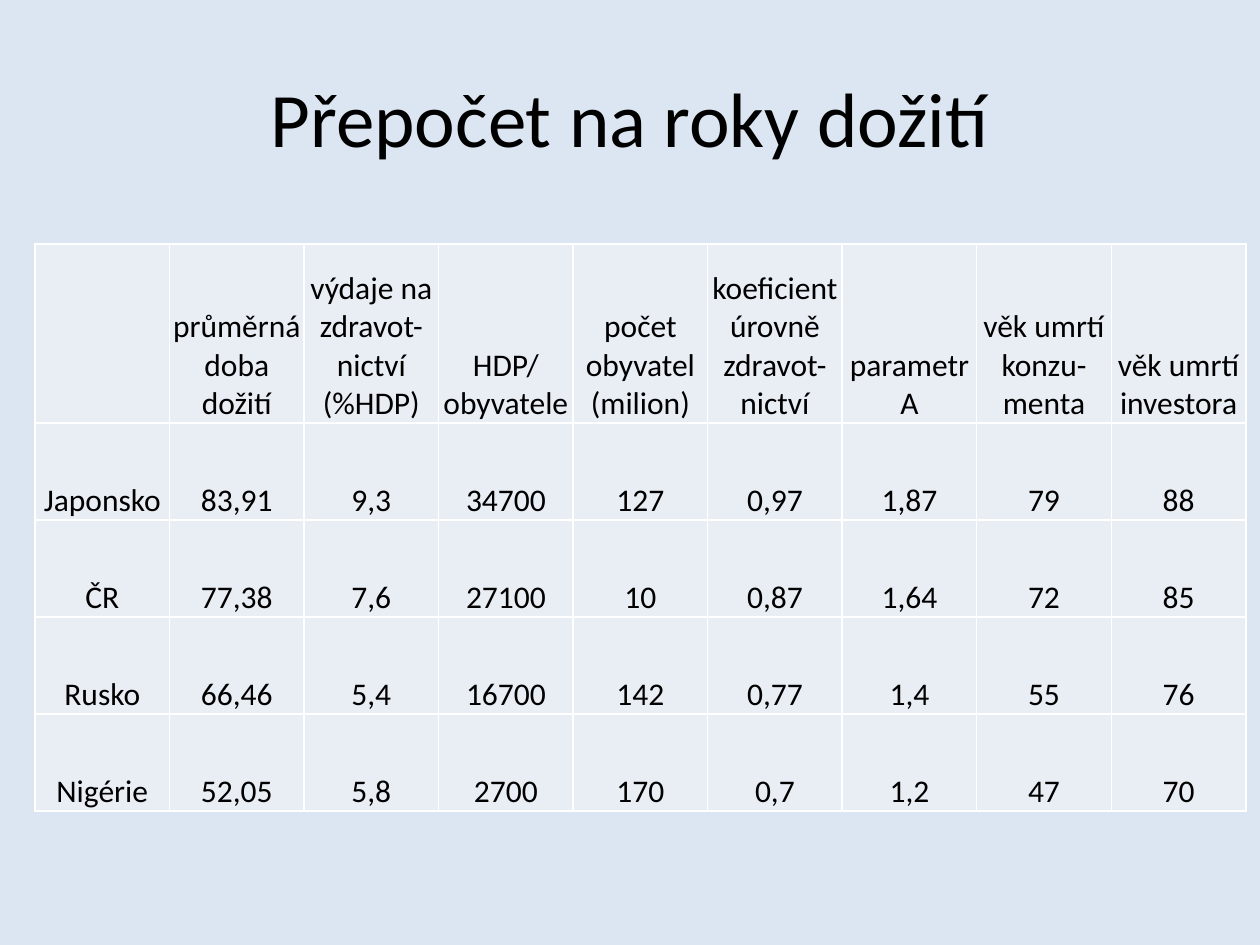
from lxml.etree import SubElement
from pptx import Presentation
from pptx.dml.color import RGBColor as RGB
from pptx.enum.text import MSO_ANCHOR as ANCHOR, PP_ALIGN as ALIGN
from pptx.oxml.ns import qn
from pptx.util import Pt

COLORS = {"background": "DCE6F2", "cell": "E9EDF4", "border": "FFFFFF", "text": "000000"}
HEADERS = [
    "",
    "průměrná doba dožití",
    "výdaje na zdravot-\nnictví (%HDP)",
    "HDP/\nobyvatele",
    "počet obyvatel (milion)",
    "koeficient úrovně zdravot-\nnictví",
    "parametr A",
    "věk umrtí konzu-menta",
    "věk umrtí investora",
]
COUNTRIES = [
    ["Japonsko", "83,91", "9,3", "34700", "127", "0,97", "1,87", "79", "88"],
    ["ČR", "77,38", "7,6", "27100", "10", "0,87", "1,64", "72", "85"],
    ["Rusko", "66,46", "5,4", "16700", "142", "0,77", "1,4", "55", "76"],
    ["Nigérie", "52,05", "5,8", "2700", "170", "0,7", "1,2", "47", "70"],
]


def px(n):
    return n * 914400 // 126


def color(name):
    return RGB.from_string(COLORS[name])


def write(tf, text, size=18, font="Calibri", fill="text", align=ALIGN.CENTER):
    tf.word_wrap = True
    tf.text = text
    for p in tf.paragraphs:
        p.alignment = align
        p.font.size = Pt(size)
        for r in p.runs:
            r.font.size = Pt(size)
            r.font.name = font
            r.font.color.rgb = color(fill)


def add_borders(cell, width=1):
    tc_pr = cell._tc.get_or_add_tcPr()
    for i, side in enumerate(("lnL", "lnR", "lnT", "lnB")):
        ln = SubElement(tc_pr, qn(f"a:{side}"), w=str(Pt(width)))
        solid = SubElement(ln, qn("a:solidFill"))
        SubElement(solid, qn("a:srgbClr"), val=COLORS["border"])
        tc_pr.insert(i, ln)


def add_title(s, x, y, w, h):
    tf = s.shapes.add_textbox(px(x), px(y), px(w), px(h)).text_frame
    tf.vertical_anchor = ANCHOR.MIDDLE
    write(tf, "Přepočet na roky dožití", size=44)


def add_life_table(s, x, y, w, h, header_h=179):
    rows = [HEADERS] + COUNTRIES
    sp = s.shapes.add_table(len(rows), len(HEADERS), px(x), px(y), px(w), px(h))
    table = sp.table
    table.first_row = table.horz_banding = False
    for col in table.columns:
        col.width = px(w) // len(HEADERS)
    for i, row in enumerate(rows):
        table.rows[i].height = px(h - header_h) // len(COUNTRIES) if i else px(header_h)
        for j, text in enumerate(row):
            cell = table.cell(i, j)
            cell.margin_left = cell.margin_right = cell.margin_top = px(1)
            cell.margin_bottom = 0
            cell.vertical_anchor = ANCHOR.BOTTOM
            cell.fill.solid()
            cell.fill.fore_color.rgb = color("cell")
            add_borders(cell)
            write(cell.text_frame, text)


def main():
    prs = Presentation()
    prs.slide_width, prs.slide_height = px(1260), px(945)
    s = prs.slides.add_slide(prs.slide_layouts[6])
    s.background.fill.solid()
    s.background.fill.fore_color.rgb = color("background")
    add_title(s, 63, 38, 1134, 157)
    add_life_table(s, 35, 244, 1211, 567)
    prs.save("out.pptx")


if __name__ == "__main__":
    main()
